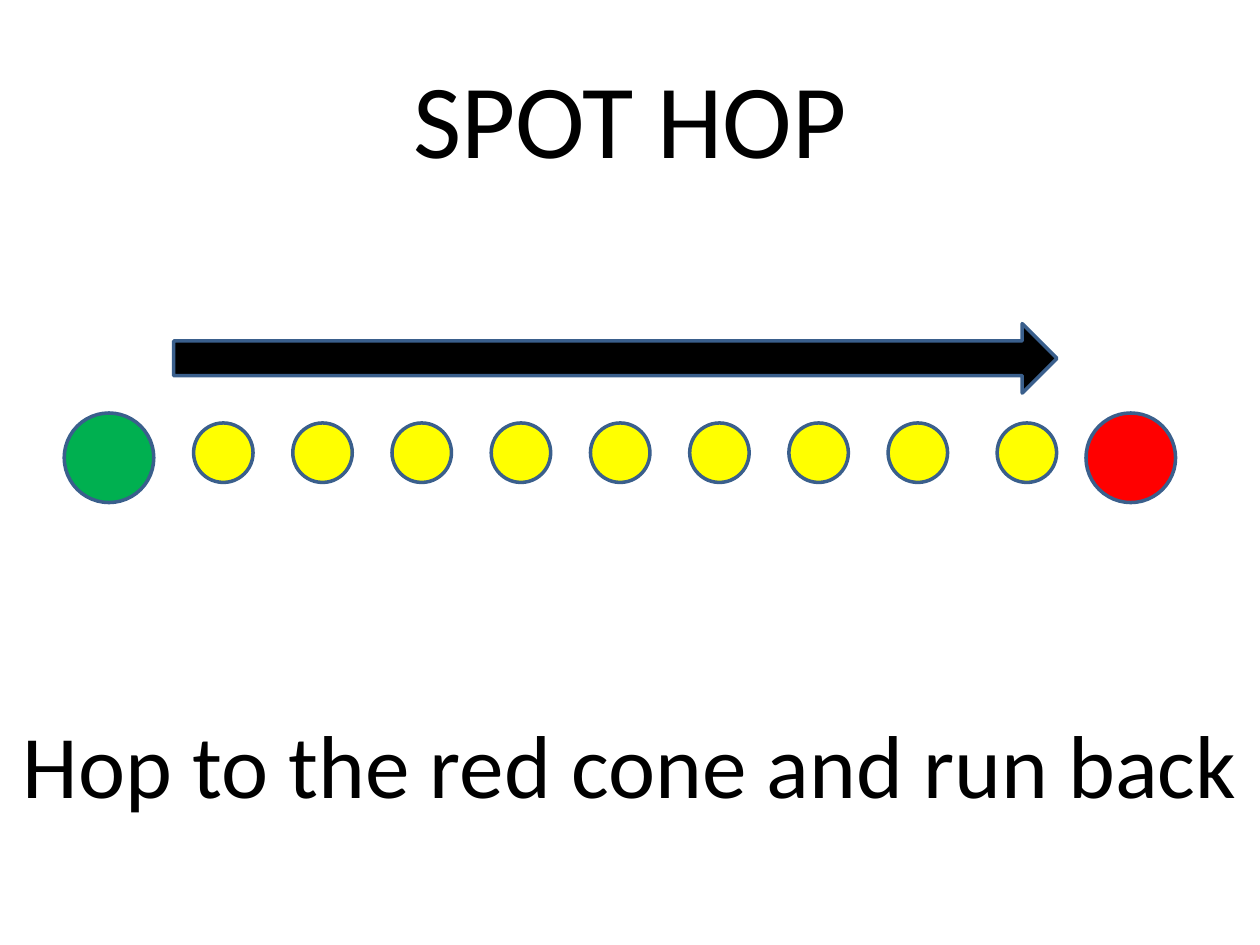
import pptx
import pptx.util
import pptx.dml.color
import pptx.enum.shapes
import pptx.enum.text

Pt = pptx.util.Pt
RGBColor = pptx.dml.color.RGBColor
SHAPE = pptx.enum.shapes.MSO_SHAPE

BLACK = RGBColor(0x00, 0x00, 0x00)
GREEN = RGBColor(0x00, 0xB0, 0x50)
RED = RGBColor(0xFF, 0x00, 0x00)
YELLOW = RGBColor(0xFF, 0xFF, 0x00)
OUTLINE = RGBColor(0x3A, 0x5F, 0x8C)

# text, (left, top, width, height), font size, line spacing
TEXTS = [
    ("SPOT HOP", (36, 21.6, 648, 90), 60, 1.0),
    ("Hop to the red cone and run back", (0, 394.6, 720, 90), 51, 0.9),
]
CONES = [(36.7, GREEN), (620.6, RED)]
CONE_TOP, CONE_SIZE = 236, 51.2
ARROW = (99.2, 184.9, 504.8, 39.7)
SPOT_TOP, SPOT_SIZE = 241.7, 34
SPOT_LEFT, SPOT_STEP, EVEN_SPOTS = 110.6, 56.7, 8
LAST_SPOT_LEFT = 569.8


def add_text(s, text, box, size, spacing):
    tf = s.shapes.add_textbox(*map(Pt, box)).text_frame
    tf.word_wrap = True
    tf.vertical_anchor = pptx.enum.text.MSO_ANCHOR.MIDDLE
    p = tf.paragraphs[0]
    p.text = text
    p.alignment = pptx.enum.text.PP_ALIGN.CENTER
    p.line_spacing = spacing
    p.font.name = "Calibri"
    p.font.size = Pt(size)
    p.font.color.rgb = BLACK


def add_outlined(s, kind, box, color):
    sp = s.shapes.add_shape(kind, *map(Pt, box))
    sp.shadow.inherit = False
    sp.fill.solid()
    sp.fill.fore_color.rgb = color
    sp.line.color.rgb = OUTLINE
    sp.line.width = Pt(2)


def main():
    prs = pptx.Presentation()
    prs.slide_width, prs.slide_height = Pt(720), Pt(540)
    s = prs.slides.add_slide(prs.slide_layouts[6])

    for text in TEXTS:
        add_text(s, *text)

    for left, color in CONES:
        add_outlined(s, SHAPE.OVAL, (left, CONE_TOP, CONE_SIZE, CONE_SIZE), color)
    add_outlined(s, SHAPE.RIGHT_ARROW, ARROW, BLACK)

    spots = [SPOT_LEFT + i * SPOT_STEP for i in range(EVEN_SPOTS)]
    for left in spots + [LAST_SPOT_LEFT]:
        add_outlined(s, SHAPE.OVAL, (left, SPOT_TOP, SPOT_SIZE, SPOT_SIZE), YELLOW)

    prs.save("out.pptx")


if __name__ == "__main__":
    main()
